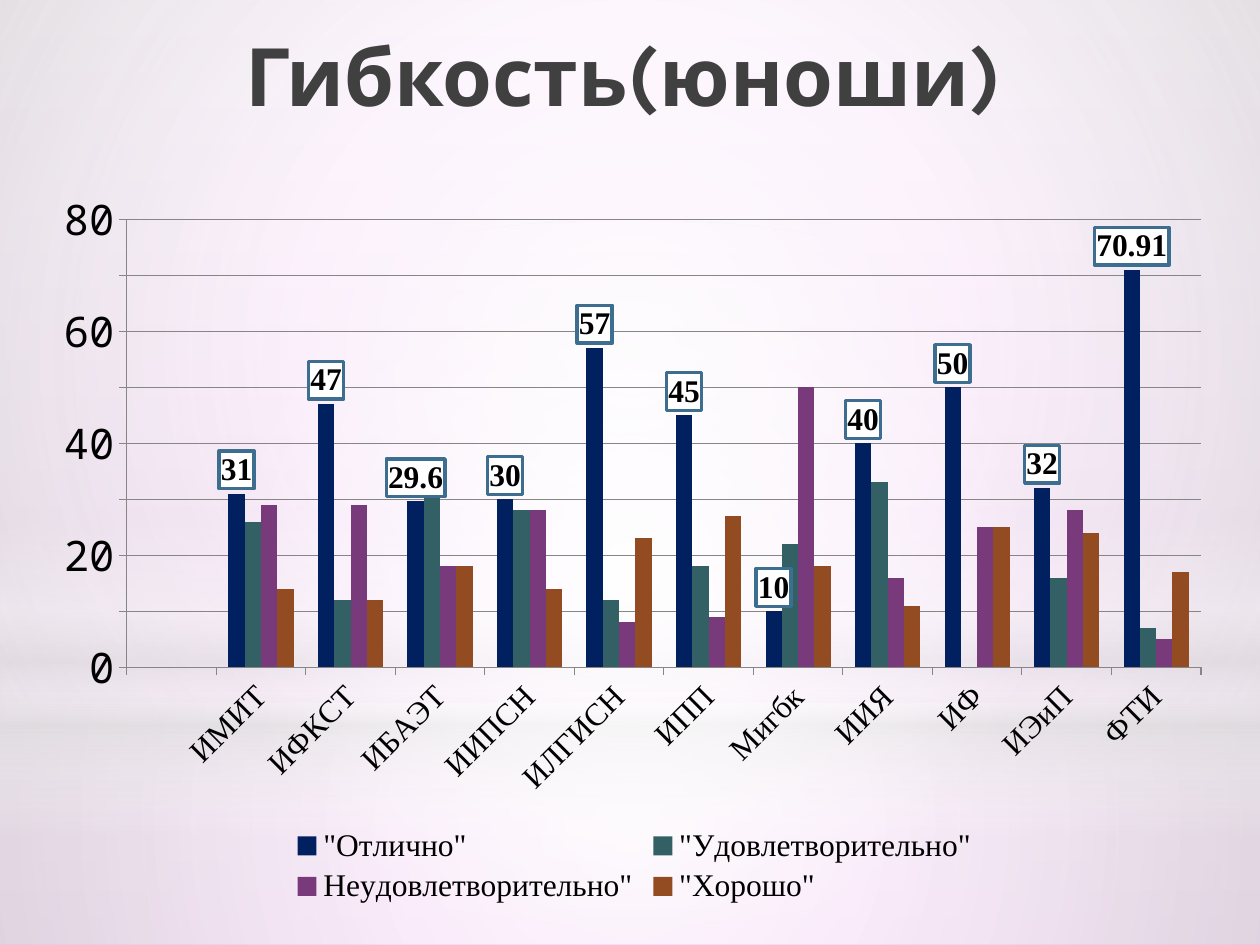
from lxml import etree
from pptx import Presentation
from pptx.chart.data import CategoryChartData
from pptx.dml.color import RGBColor
from pptx.enum.chart import XL_CHART_TYPE, XL_LABEL_POSITION, XL_LEGEND_POSITION, XL_TICK_MARK
from pptx.enum.shapes import MSO_SHAPE
from pptx.enum.text import MSO_ANCHOR, PP_ALIGN
from pptx.oxml import parse_xml
from pptx.oxml.ns import nsdecls, qn
from pptx.util import Pt

COLUMNS = XL_CHART_TYPE.COLUMN_CLUSTERED
OUTSIDE = XL_LABEL_POSITION.OUTSIDE_END
BOTTOM = XL_LEGEND_POSITION.BOTTOM
TICK_OUT = XL_TICK_MARK.OUTSIDE
TICK_NONE = XL_TICK_MARK.NONE
RECTANGLE = MSO_SHAPE.RECTANGLE
ELLIPSE = MSO_SHAPE.OVAL
TOP = MSO_ANCHOR.TOP
LEFT = PP_ALIGN.LEFT

COLORS = {
    "text": "000000", "title": "404040", "axis": "868686",
    "label_fill": "FFFFFF", "label_line": "3E6E8F",
    "white": "FFFFFF", "grey": "DEDEDE",
    "pink": "EAACED", "light_pink": "EFC5F1", "pale_pink": "FAE8FB",
    "excellent": "002060", "satisfactory": "326065",
    "poor": "783A7A", "good": "934C22",
}
SERIF = "Times New Roman"
TITLE_FONT = {"name": "Karla", "size": Pt(46), "bold": True}
CHART_FONT = {"name": "Karla", "size": Pt(10)}
SERIF_FONT = {"name": SERIF, "size": Pt(18), "bold": False}
LABEL_FONT = {"name": SERIF, "size": Pt(18), "bold": True}
VALUE_FONT = {"name": "Noto Sans Mono", "size": Pt(24), "bold": False}

BACKGROUND = [(0, "pink", 100), (35, "light_pink", 100), (100, "pale_pink", 100)]
LAYERS = [
    (RECTANGLE, (0, 402, 720, 138),
     [(0, "white", 91), (37, "white", 76), (100, "grey", 79)], None),
    (RECTANGLE, (0, 0, 720, 402),
     [(0, "white", 89), (48, "white", 62), (100, "grey", 79)], None),
    (RECTANGLE, (0, 296.6, 720, 180),
     [(0, "white", 0), (29, "white", 30), (45, "grey", 40),
      (55, "white", 26), (65, "grey", 60), (100, "white", 0)], 90),
    (ELLIPSE, (0, 126, 720, 402), [(0, "white", 100), (56, "white", 0)], None),
]

INSTITUTES = ["", "ИМИТ", "ИФКСТ", "ИБАЭТ", "ИИПСН", "ИЛГИСН", "ИПП",
              "Мигбк", "ИИЯ", "ИФ", "ИЭиП", "ФТИ"]
GRADES = [
    ('"Отлично"', "excellent", [None, 31, 47, 29.6, 30, 57, 45, 10, 40, 50, 32, 70.91]),
    ('"Удовлетворительно"', "satisfactory", [None, 26, 12, 33, 28, 12, 18, 22, 33, 0, 16, 7]),
    ('Неудовлетворительно"', "poor", [None, 29, 29, 18, 28, 8, 9, 50, 16, 25, 28, 5]),
    ('"Хорошо"', "good", [None, 14, 12, 18, 14, 23, 27, 18, 11, 25, 24, 17]),
]
PLOT_LAYOUT = {"x": 0.07, "y": 0.06, "w": 0.91, "h": 0.61}


def set_all(target, values):
    for name, value in values.items():
        setattr(target, name, value)


class SlideBuilder:
    def __init__(self, slide):
        self.slide = slide

    def color(self, name):
        return RGBColor.from_string(COLORS[name])

    def font(self, font, values, color="text"):
        set_all(font, values)
        font.color.rgb = self.color(color)

    def gradient(self, fill, owner, stops, angle):
        fill.gradient()
        gradient = next(owner.iter(qn("a:gradFill")))
        for child in list(gradient):
            gradient.remove(child)
        stop_list = etree.SubElement(gradient, qn("a:gsLst"))
        for position, color, opacity in stops:
            stop = etree.SubElement(stop_list, qn("a:gs"), pos=str(position * 1000))
            tint = etree.SubElement(stop, qn("a:srgbClr"), val=COLORS[color])
            if opacity < 100:
                etree.SubElement(tint, qn("a:alpha"), val=str(opacity * 1000))
        if angle is None:
            direction = etree.SubElement(gradient, qn("a:path"), path="circle")
            center = {side: "50000" for side in "ltrb"}
            etree.SubElement(direction, qn("a:fillToRect"), **center)
        else:
            etree.SubElement(gradient, qn("a:lin"), ang=str(angle * 60000), scaled="0")

    def background(self, stops, angle):
        self.gradient(self.slide.background.fill, self.slide.element, stops, angle)

    def layer(self, kind, place, stops, angle):
        shape = self.slide.shapes.add_shape(kind, *map(Pt, place))
        shape.shadow.inherit = False
        shape.line.fill.background()
        self.gradient(shape.fill, shape.element, stops, angle)

    def title(self, text, place):
        frame = self.slide.shapes.add_textbox(*map(Pt, place)).text_frame
        set_all(frame, {"word_wrap": True, "vertical_anchor": TOP, "margin_top": 0})
        para = frame.paragraphs[0]
        para.alignment = LEFT
        span = para.add_run()
        span.text = text
        self.font(span.font, TITLE_FONT, "title")

    def axis(self, axis, font):
        set_all(axis, {"major_tick_mark": TICK_OUT, "minor_tick_mark": TICK_NONE})
        self.line(axis.format.line)
        self.font(axis.tick_labels.font, font)

    def line(self, line):
        line.color.rgb = self.color("axis")
        line.width = Pt(0.75)

    def labels(self, series):
        labels = series.data_labels
        set_all(labels, {"show_value": True, "position": OUTSIDE})
        self.font(labels.font, LABEL_FONT)
        frame = parse_xml(
            f'<c:spPr {nsdecls("c", "a")}>'
            f'<a:solidFill><a:srgbClr val="{COLORS["label_fill"]}"/></a:solidFill>'
            f'<a:ln w="{Pt(2)}"><a:solidFill><a:srgbClr val="{COLORS["label_line"]}"/>'
            '</a:solidFill></a:ln></c:spPr>')
        next(series.format.line.fill and labels.font and
             self.slide.shapes[-1].chart.element.iter(qn("c:dLbls"))
             ).find(qn("c:txPr")).addprevious(frame)

    def plot_layout(self, chart, layout):
        area = next(chart.element.iter(qn("c:plotArea")))
        for old in area.findall(qn("c:layout")):
            area.remove(old)
        outer = etree.Element(qn("c:layout"))
        manual = etree.SubElement(outer, qn("c:manualLayout"))
        entries = {"layoutTarget": "inner", "xMode": "edge", "yMode": "edge", **layout}
        for name, value in entries.items():
            etree.SubElement(manual, qn(f"c:{name}"), val=str(value))
        area.insert(0, outer)

    def column_chart(self, categories, grades, place):
        data = CategoryChartData()
        data.categories = categories
        for name, _, values in grades:
            data.add_series(name, values)
        chart = self.slide.shapes.add_chart(COLUMNS, *map(Pt, place), data).chart
        set_all(chart, {"has_title": False, "has_legend": True})
        self.font(chart.font, CHART_FONT)
        set_all(chart.legend, {"position": BOTTOM, "include_in_layout": False})
        self.font(chart.legend.font, SERIF_FONT)
        plot = chart.plots[0]
        set_all(plot, {"gap_width": 150, "overlap": 0, "vary_by_categories": False})
        for series, (_, color, _) in zip(plot.series, grades):
            series.format.fill.solid()
            series.format.fill.fore_color.rgb = self.color(color)
        self.labels(plot.series[0])
        self.axis(chart.category_axis, SERIF_FONT)
        slant = chart.category_axis.format and next(chart.element.iter(qn("c:catAx")))
        slant.find(qn("c:txPr")).find(qn("a:bodyPr")).set("rot", str(-45 * 60000))
        values = chart.value_axis
        self.axis(values, VALUE_FONT)
        set_all(values, {"minimum_scale": 0, "maximum_scale": 80, "major_unit": 10,
                         "has_major_gridlines": True})
        self.line(values.major_gridlines.format.line)
        self.plot_layout(chart, PLOT_LAYOUT)


def main():
    deck = Presentation()
    set_all(deck, {"slide_width": Pt(720), "slide_height": Pt(540)})
    page = SlideBuilder(deck.slides.add_slide(deck.slide_layouts[6]))
    page.background(BACKGROUND, 270)
    for layer in LAYERS:
        page.layer(*layer)
    page.title("Гибкость(юноши)", (133.2, 15.1, 512.6, 90))
    page.column_chart(INSTITUTES, GRADES, (25.2, 100.1, 674.6, 419.8))
    deck.save("out.pptx")


if __name__ == "__main__":
    main()
